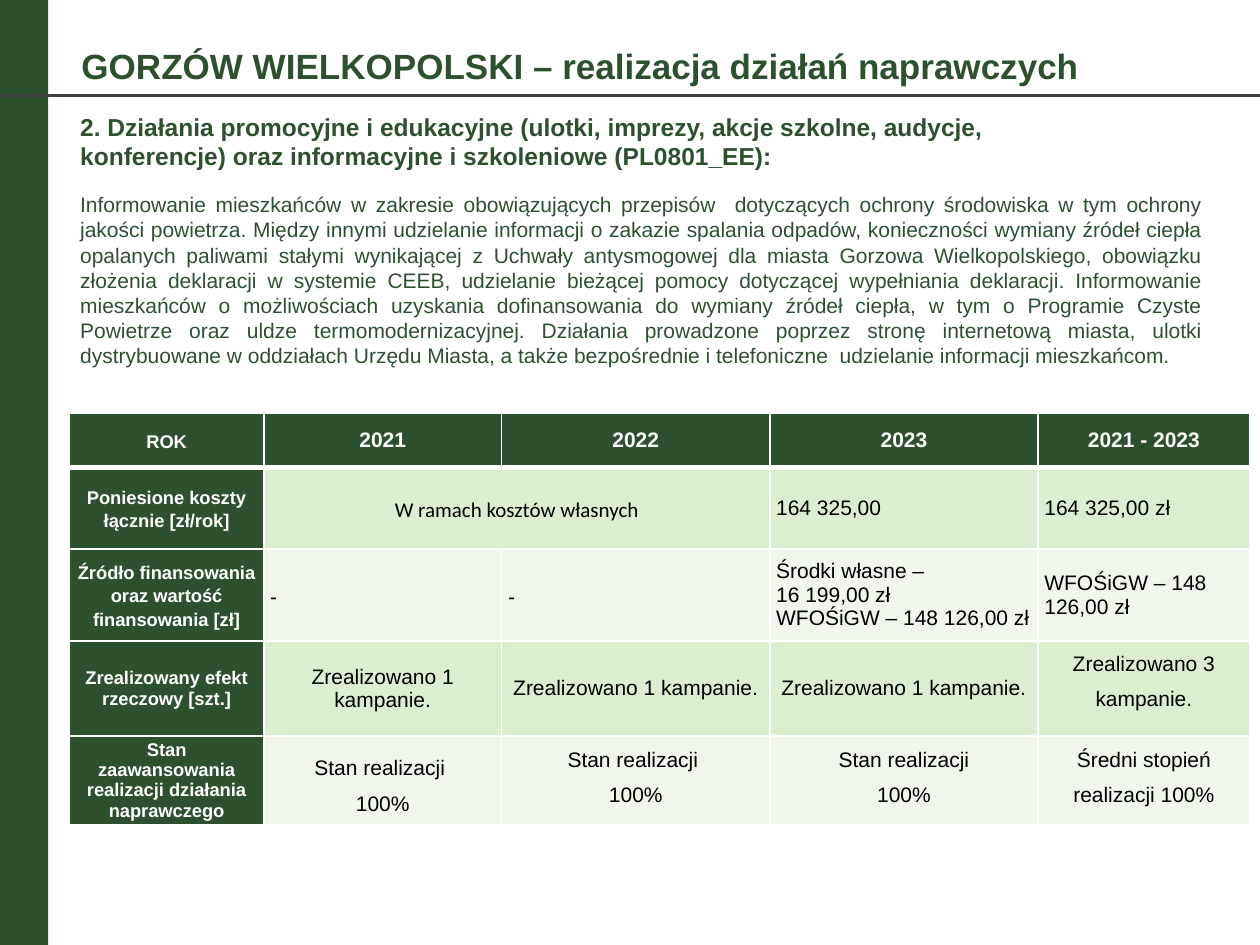
from lxml.etree import SubElement
from pptx import Presentation
from pptx.dml.color import RGBColor
from pptx.enum.shapes import MSO_CONNECTOR, MSO_SHAPE
from pptx.enum.text import MSO_ANCHOR as Anchor, PP_ALIGN as Align
from pptx.oxml.ns import qn
from pptx.util import Pt

COLORS = {
    "green": "2D512F",
    "gray": "404040",
    "white": "FFFFFF",
    "black": "000000",
    "band_dark": "DCEED0",
    "band_light": "EEF7E9",
}


def rgb(name):
    return RGBColor.from_string(COLORS[name])


def write(frame, text, size=12, color="black", bold=False, font="Arial",
          align=Align.LEFT, line=None, after=None):
    for index, block in enumerate(text.split("\n")):
        para = frame.paragraphs[0] if index == 0 else frame.add_paragraph()
        para.alignment = align
        if line:
            para.line_spacing = line
        if after:
            para.space_after = Pt(after)
        for number, piece in enumerate(block.split("|")):
            if number:
                para.add_line_break()
            span = para.add_run()
            span.text = piece
            span.font.size = Pt(size)
            span.font.name = font
            span.font.bold = bold
            span.font.color.rgb = rgb(color)


class Painter:
    def __init__(self, page):
        self.page = page

    def bar(self, left, top, width, height, color):
        box = self.page.shapes.add_shape(
            MSO_SHAPE.RECTANGLE, Pt(left), Pt(top), Pt(width), Pt(height))
        box.shadow.inherit = False
        box.fill.solid()
        box.fill.fore_color.rgb = rgb(color)
        box.line.fill.background()

    def rule(self, start, end, y, color, weight):
        rule = self.page.shapes.add_connector(
            MSO_CONNECTOR.STRAIGHT, Pt(start), Pt(y), Pt(end), Pt(y))
        rule.line.color.rgb = rgb(color)
        rule.line.width = Pt(weight)
        SubElement(rule._element.spPr, qn("a:effectLst"))

    def text(self, left, top, width, height, text, anchor=Anchor.TOP,
             inset=3.6, **style):
        box = self.page.shapes.add_textbox(
            Pt(left), Pt(top), Pt(width), Pt(height))
        frame = box.text_frame
        frame.word_wrap = True
        frame.vertical_anchor = anchor
        frame.margin_top = Pt(inset)
        write(frame, text, color="green", **style)

    def border(self, cell, side, weight):
        edge = SubElement(cell._tc.get_or_add_tcPr(), qn(f"a:ln{side}"),
                          w=str(Pt(weight)))
        fill = SubElement(edge, qn("a:solidFill"))
        SubElement(fill, qn("a:srgbClr"), val=COLORS["white"])

    def cell(self, cell, text, fill, header=False, anchor=Anchor.MIDDLE, **style):
        cell.margin_left = cell.margin_right = Pt(3.6)
        cell.margin_top = cell.margin_bottom = 0
        cell.vertical_anchor = anchor
        for side in "LRTB":
            self.border(cell, side, 3 if header and side == "B" else 1)
        cell.fill.solid()
        cell.fill.fore_color.rgb = rgb(fill)
        if text:
            write(cell.text_frame, text, **style)

    def table(self, left, top, widths, heights, rows):
        table = self.page.shapes.add_table(
            len(heights), len(widths), Pt(left), Pt(top),
            Pt(sum(widths)), Pt(sum(heights))).table
        for column, width in zip(table.columns, widths):
            column.width = Pt(width)
        for row, height in zip(table.rows, heights):
            row.height = Pt(height)
        for r, row in enumerate(rows):
            for c, (text, style) in enumerate(row):
                if r == 0 or c == 0:
                    fill = "green"
                    style = {"size": 10.5 if c == 0 else 12, "color": "white",
                             "bold": True, "align": Align.CENTER, **style}
                else:
                    fill = "band_dark" if r % 2 else "band_light"
                self.cell(table.cell(r, c), text, fill, header=r == 0, **style)
        return table


TITLE = "GORZÓW WIELKOPOLSKI – realizacja działań naprawczych"
SUBTITLE = (
    "2. Działania promocyjne i edukacyjne (ulotki, imprezy, akcje szkolne, audycje, "
    "konferencje) oraz informacyjne i szkoleniowe (PL0801_EE):")
BODY = (
    "Informowanie mieszkańców w zakresie obowiązujących przepisów  dotyczących "
    "ochrony środowiska w tym ochrony jakości powietrza. Między innymi udzielanie "
    "informacji o zakazie spalania odpadów, konieczności wymiany źródeł ciepła "
    "opalanych paliwami stałymi wynikającej z Uchwały antysmogowej dla miasta "
    "Gorzowa Wielkopolskiego, obowiązku złożenia deklaracji w systemie CEEB, "
    "udzielanie bieżącej pomocy dotyczącej wypełniania deklaracji. Informowanie "
    "mieszkańców o możliwościach uzyskania dofinansowania do wymiany źródeł ciepła, "
    "w tym o Programie Czyste Powietrze oraz uldze termomodernizacyjnej. Działania "
    "prowadzone poprzez stronę internetową miasta, ulotki dystrybuowane w oddziałach "
    "Urzędu Miasta, a także bezpośrednie i telefoniczne  udzielanie informacji "
    "mieszkańcom.")

PLAIN = {}
CENTERED = {"align": Align.CENTER}
LOOSE = {"line": 1.15, "after": 8}
WIDE = {"align": Align.CENTER, "line": 1.5}
WIDE_TOP = {**WIDE, "anchor": Anchor.TOP}
CAMPAIGN = ("Zrealizowano 1 kampanie.", CENTERED)

ROWS = [
    [("ROK", LOOSE)] + [(year, PLAIN) for year in ("2021", "2022", "2023", "2021 - 2023")],
    [("Poniesione koszty łącznie [zł/rok]", LOOSE),
     ("W ramach kosztów własnych", {**LOOSE, **CENTERED, "font": "Calibri"}),
     ("", PLAIN),
     ("164 325,00", PLAIN),
     ("164 325,00 zł", PLAIN)],
    [("Źródło finansowania oraz wartość finansowania [zł]", LOOSE),
     ("-", LOOSE),
     ("-", LOOSE),
     ("Środki własne – |16 199,00 zł\nWFOŚiGW – 148 126,00 zł", PLAIN),
     ("WFOŚiGW – 148 126,00 zł", PLAIN)],
    [("Zrealizowany efekt rzeczowy [szt.]", PLAIN),
     CAMPAIGN, CAMPAIGN, CAMPAIGN,
     ("Zrealizowano 3 kampanie.", WIDE_TOP)],
    [("Stan zaawansowania realizacji działania naprawczego", PLAIN),
     ("Stan realizacji |100%", {**WIDE, "after": 8}),
     ("Stan realizacji \n100%", WIDE_TOP),
     ("Stan realizacji|100%", WIDE_TOP),
     ("Średni stopień realizacji 100%", WIDE_TOP)],
]


def main():
    deck = Presentation()
    deck.slide_width, deck.slide_height = Pt(720), Pt(540)
    painter = Painter(deck.slides.add_slide(deck.slide_layouts[6]))
    painter.bar(-8.5, 0, 36, 550, "green")
    painter.rule(740, -20, 54.5, "gray", 1.5)
    painter.text(39.5, 20, 626.5, 34.5, TITLE, anchor=Anchor.MIDDLE, size=20, bold=True)
    table = painter.table(39.75, 236.25, [111, 136, 153.25, 153.25, 121],
                          [31, 46.5, 52.5, 54.5, 46], ROWS)
    table.cell(1, 1).merge(table.cell(1, 2))
    painter.text(38.75, 59, 610.5, 63.5, SUBTITLE, inset=5, size=14, bold=True)
    painter.text(38.75, 106, 656, 108.5, BODY, align=Align.JUSTIFY)
    deck.save("out.pptx")


if __name__ == "__main__":
    main()
